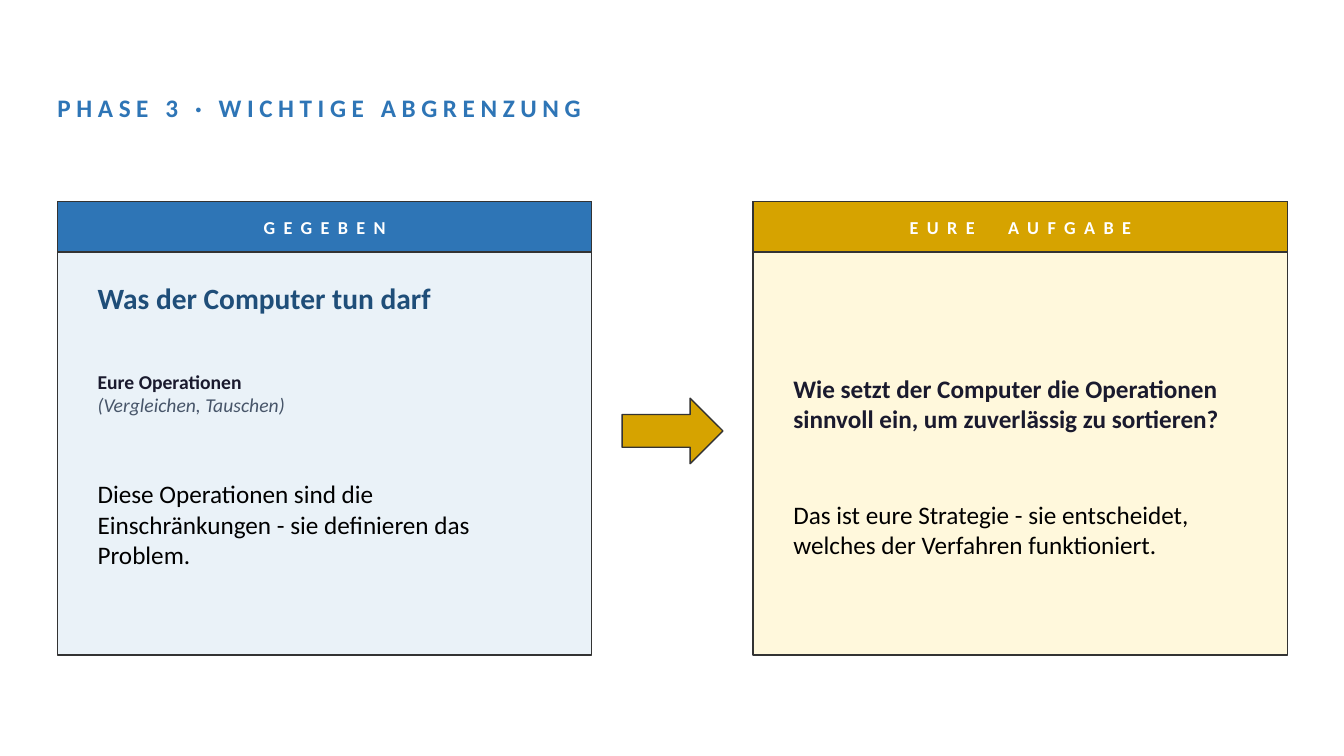
import pptx
import pptx.util
import pptx.dml.color
import pptx.enum.shapes
import pptx.enum.text

SHAPE = pptx.enum.shapes.MSO_SHAPE
ALIGN = pptx.enum.text.PP_ALIGN
ANCHOR = pptx.enum.text.MSO_ANCHOR

# Content
TITLE = "PHASE 3 · WICHTIGE ABGRENZUNG"
PANELS = [
    {"head": "GEGEBEN", "dark": "2E75B6", "light": "EAF2F8", "texts": [
        (270, 50, "middle", [("Was der Computer tun darf", "lead")]),
        (330, 120, "middle", [("Eure Operationen", "label"),
                              ("(Vergleichen, Tauschen)", "hint")]),
        (470, 160, "top", [("Diese Operationen sind die Einschränkungen - "
                            "sie definieren das Problem.", "body")])]},
    {"head": "EURE  AUFGABE", "dark": "D6A300", "light": "FFF8DC", "texts": [
        (330, 140, "middle", [("Wie setzt der Computer die Operationen sinnvoll ein, "
                               "um zuverlässig zu sortieren?", "quest")]),
        (490, 140, "top", [("Das ist eure Strategie - sie entscheidet, "
                            "welches der Verfahren funktioniert.", "body")])]},
]

# Format: font values, colour, letter spacing in points
STYLES = {
    "title": ({"size": 18, "bold": True}, "2E75B6", 4),
    "head": ({"size": 13, "bold": True}, "FFFFFF", 6),
    "lead": ({"size": 21, "bold": True}, "1F4E79", 0),
    "label": ({"size": 14, "bold": True}, "1A1A2E", 0),
    "hint": ({"size": 14, "italic": True}, "475569", 0),
    "quest": ({"size": 18, "bold": True}, "1A1A2E", 0),
    "body": ({"size": 18}, "000000", 0),
}
ANCHORS = {"top": ANCHOR.TOP, "middle": ANCHOR.MIDDLE}

# Layout in px, 100 to the inch
WIDE, HIGH = 1333, 750
LEFT, TOP = 57, 200
PANEL_W, PANEL_H, HEAD_H = 530, 450, 50
GAP, PAD = 160, 30
ARROW_W, ARROW_H = 100, 65


def px(*nums):
    return [pptx.util.Emu(n * 9144) for n in nums]


def color(code):
    return pptx.dml.color.RGBColor.from_string(code)


def write(shape, lines, anchor="middle", align=ALIGN.LEFT):
    """Fill a shape with (text, style name) paragraphs."""
    frame = shape.text_frame
    frame.word_wrap = True
    frame.auto_size = pptx.enum.text.MSO_AUTO_SIZE.NONE
    frame.vertical_anchor = ANCHORS[anchor]
    for i, (text, style) in enumerate(lines):
        para = frame.add_paragraph() if i else frame.paragraphs[0]
        para.alignment = align
        run = para.add_run()
        run.text = text
        form, tint, space = STYLES[style]
        for key, val in {"name": "Calibri", **form}.items():
            setattr(run.font, key, pptx.util.Pt(val) if key == "size" else val)
        run.font.color.rgb = color(tint)
        if space:
            run.font._element.set("spc", str(space * 100))


def block(slide, kind, box, fill):
    shape = slide.shapes.add_shape(kind, *px(*box))
    shape.shadow.inherit = False
    shape.fill.solid()
    shape.fill.fore_color.rgb = color(fill)
    shape.line.color.rgb = color("333333")
    shape.line.width = pptx.util.Pt(1)
    return shape


def panel(slide, left, data):
    block(slide, SHAPE.RECTANGLE, (left, TOP, PANEL_W, PANEL_H), data["light"])
    head = block(slide, SHAPE.RECTANGLE, (left, TOP, PANEL_W, HEAD_H), data["dark"])
    write(head, [(data["head"], "head")], align=ALIGN.CENTER)
    for top, high, anchor, lines in data["texts"]:
        box = slide.shapes.add_textbox(*px(left + PAD, top, PANEL_W - 2 * PAD, high))
        write(box, lines, anchor)


def main():
    deck = pptx.Presentation()
    deck.slide_width, deck.slide_height = px(WIDE, HIGH)
    slide = deck.slides.add_slide(deck.slide_layouts[5])

    title = slide.shapes.title
    for key, val in zip(("left", "top", "width", "height"), px(47, 87, 800, 40)):
        setattr(title, key, val)
    write(title, [(TITLE, "title")])

    for i, data in enumerate(PANELS):
        panel(slide, LEFT + i * (PANEL_W + GAP), data)

    left = LEFT + PANEL_W + (GAP - ARROW_W) // 2
    top = TOP + HEAD_H + (PANEL_H - HEAD_H - ARROW_H) // 2 - 22
    block(slide, SHAPE.RIGHT_ARROW, (left, top, ARROW_W, ARROW_H), "D6A300")
    deck.save("out.pptx")


if __name__ == "__main__":
    main()
